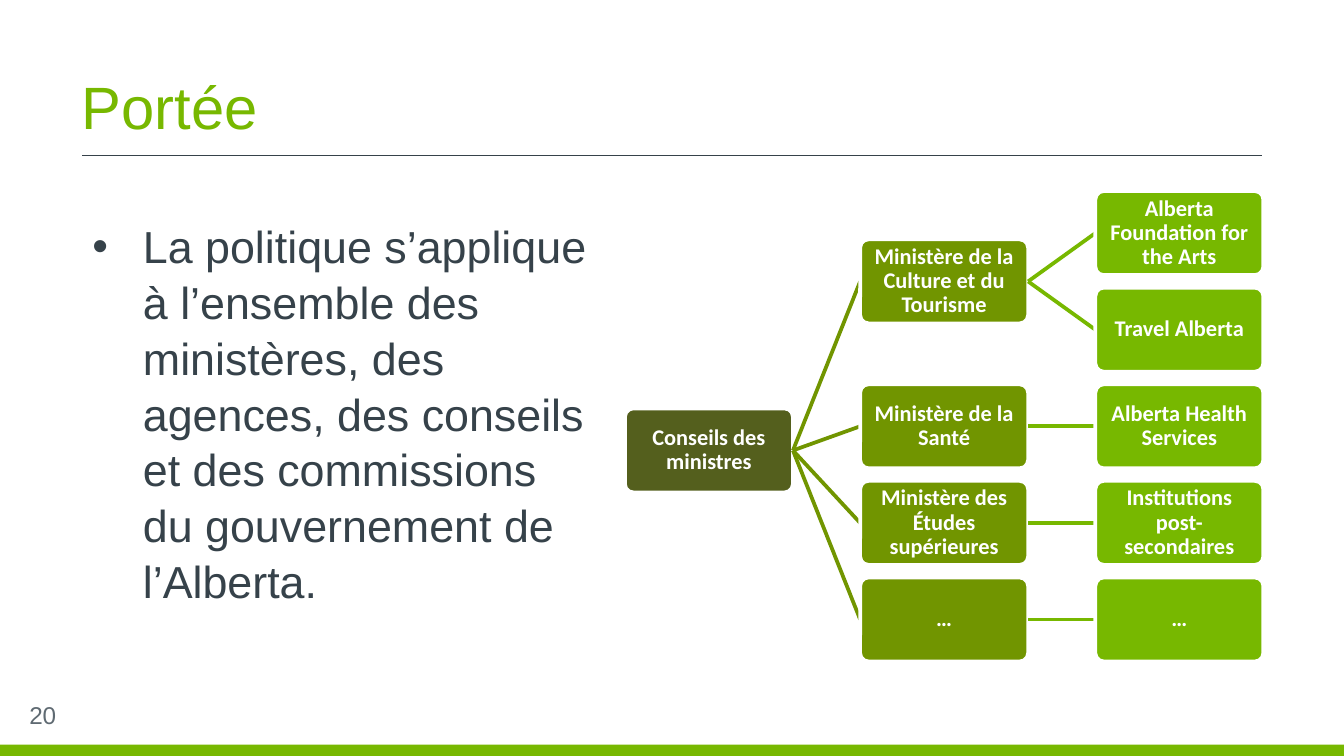
from dataclasses import dataclass

from lxml.etree import SubElement
from pptx import Presentation
from pptx.dml.color import RGBColor
from pptx.enum.shapes import MSO_CONNECTOR, MSO_SHAPE
from pptx.enum.text import MSO_ANCHOR, PP_ALIGN
from pptx.oxml.ns import qn
from pptx.util import Pt


@dataclass(frozen=True)
class Theme:
    white: str = "FFFFFF"
    slate: str = "36424A"
    gray: str = "5F6A72"
    green: str = "77B800"
    levels: tuple = ("545F1D", "719500", "77B800")
    text_font: str = "Arial"
    chart_font: str = "Calibri"
    title_size: float = 32
    body_size: float = 24
    number_size: float = 13
    box_size: float = 12
    rule_width: float = 0.75
    line_width: float = 2


class SlideBuilder:
    def __init__(self, slide, theme):
        self.slide = slide
        self.theme = theme

    def add_run(self, paragraph, text, size, color, font, bold=False):
        run = paragraph.add_run()
        run.text = text
        run.font.size = Pt(size)
        run.font.name = font
        run.font.bold = bold
        run.font.color.rgb = RGBColor.from_string(color)

    def add_text(self, text, left, top, width, height, size, color, anchor=MSO_ANCHOR.TOP):
        shape = self.slide.shapes.add_textbox(Pt(left), Pt(top), Pt(width), Pt(height))
        frame = shape.text_frame
        frame.word_wrap = True
        frame.vertical_anchor = anchor
        paragraph = frame.paragraphs[0]
        self.add_run(paragraph, text, size, color, self.theme.text_font)
        return paragraph

    def add_bullet_text(self, text, left, top, width, height, indent):
        theme = self.theme
        paragraph = self.add_text(text, left, top, width, height, theme.body_size, theme.slate)
        paragraph.line_spacing = 1.04
        properties = paragraph._p.get_or_add_pPr()
        properties.set("marL", str(Pt(indent)))
        properties.set("indent", str(-Pt(indent)))
        SubElement(properties, qn("a:buFont"), typeface=theme.text_font)
        SubElement(properties, qn("a:buChar"), char="•")

    def add_shape(self, kind, left, top, width, height, color):
        shape = self.slide.shapes.add_shape(kind, Pt(left), Pt(top), Pt(width), Pt(height))
        shape.shadow.inherit = False
        shape.fill.solid()
        shape.fill.fore_color.rgb = RGBColor.from_string(color)
        shape.line.fill.background()
        return shape

    def add_line(self, start, end, color, width):
        points = [Pt(value) for value in (*start, *end)]
        line = self.slide.shapes.add_connector(MSO_CONNECTOR.STRAIGHT, *points)
        line.line.color.rgb = RGBColor.from_string(color)
        line.line.width = Pt(width)
        SubElement(line._element.spPr, qn("a:effectLst"))

    def add_box(self, text, left, top, width, height, color):
        theme = self.theme
        shape = self.add_shape(MSO_SHAPE.ROUNDED_RECTANGLE, left, top, width, height, color)
        shape.adjustments[0] = 0.1
        shape.line.color.rgb = RGBColor.from_string(theme.white)
        shape.line.width = Pt(theme.line_width)
        frame = shape.text_frame
        frame.word_wrap = True
        frame.vertical_anchor = MSO_ANCHOR.MIDDLE
        frame.margin_left = frame.margin_right = Pt(2)
        frame.margin_top = frame.margin_bottom = Pt(2)
        paragraph = frame.paragraphs[0]
        paragraph.alignment = PP_ALIGN.CENTER
        paragraph.line_spacing = 0.9
        self.add_run(paragraph, text, theme.box_size, theme.white, theme.chart_font, True)


MINISTRIES = [
    ("Ministère de la Culture et du Tourisme",
     ["Alberta Foundation for the Arts", "Travel Alberta"]),
    ("Ministère de la Santé", ["Alberta Health Services"]),
    ("Ministère des Études supérieures", ["Institutions post-secondaires"]),
    ("…", ["…"]),
]
BOX_WIDTH, BOX_HEIGHT = 90, 45
CHART_LEFT, CHART_TOP = 334.8, 102.4
COLUMN_STEP, ROW_STEP = 1.4 * BOX_WIDTH, 1.15 * BOX_HEIGHT


def draw_node(builder, text, level, row, parent_row=None):
    theme = builder.theme
    left = CHART_LEFT + level * COLUMN_STEP
    top = CHART_TOP + row * ROW_STEP
    if parent_row is not None:
        start = (left - COLUMN_STEP + BOX_WIDTH, CHART_TOP + parent_row * ROW_STEP + BOX_HEIGHT / 2)
        end = (left, top + BOX_HEIGHT / 2)
        builder.add_line(start, end, theme.levels[level], theme.line_width)
    builder.add_box(text, left, top, BOX_WIDTH, BOX_HEIGHT, theme.levels[level])


def draw_hierarchy(builder):
    rows = []
    first_row = 0
    for _, agencies in MINISTRIES:
        rows.append(first_row + (len(agencies) - 1) / 2)
        first_row += len(agencies)
    root_row = (rows[0] + rows[-1]) / 2

    draw_node(builder, "Conseils des ministres", 0, root_row)
    agency_row = 0
    for (ministry, agencies), row in zip(MINISTRIES, rows):
        draw_node(builder, ministry, 1, row, root_row)
        for agency in agencies:
            draw_node(builder, agency, 2, agency_row, row)
            agency_row += 1


def main():
    presentation = Presentation()
    presentation.slide_width = Pt(720)
    presentation.slide_height = Pt(405)
    slide = presentation.slides.add_slide(presentation.slide_layouts[6])
    theme = Theme()
    builder = SlideBuilder(slide, theme)

    builder.add_shape(MSO_SHAPE.RECTANGLE, 0, 399, 720, 6, theme.green)
    builder.add_line((44, 83.4), (676, 83.4), theme.slate, theme.rule_width)
    builder.add_bullet_text(
        "La politique s’applique à l’ensemble des ministères, des agences, "
        "des conseils et des commissions du gouvernement de l’Alberta.",
        42.5, 112.5, 283.7, 282, 27)
    builder.add_text("Portée", 36.7, 34.6, 647.3, 44.6,
                     theme.title_size, theme.green, MSO_ANCHOR.BOTTOM)
    builder.add_text("20", 8.6, 372.2, 162, 21.6,
                     theme.number_size, theme.gray, MSO_ANCHOR.MIDDLE)
    draw_hierarchy(builder)
    presentation.save("out.pptx")


if __name__ == "__main__":
    main()
